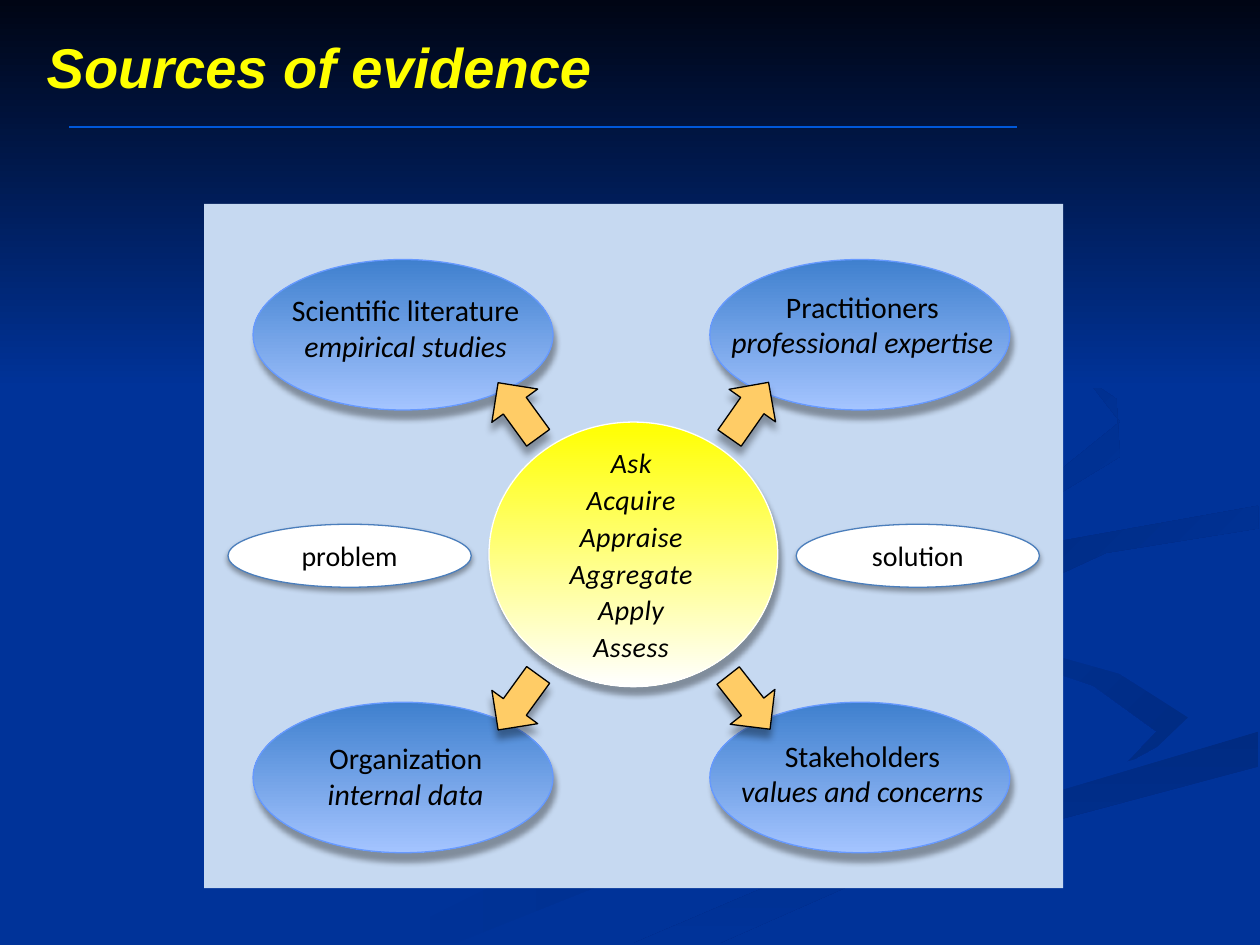
from lxml.etree import SubElement
from pptx import Presentation
from pptx.dml.color import RGBColor
from pptx.enum.shapes import MSO_CONNECTOR, MSO_SHAPE as Shape
from pptx.enum.text import MSO_ANCHOR as Anchor, MSO_AUTO_SIZE as AutoSize, PP_ALIGN as Align
from pptx.oxml.ns import qn
from pptx.util import Pt

NAVY = RGBColor.from_string("003399")
DEEP_NAVY = RGBColor.from_string("002B82")
MIDNIGHT = RGBColor.from_string("000514")
RULE_BLUE = RGBColor.from_string("0058DA")
YELLOW = RGBColor.from_string("FFFF00")
WHITE = RGBColor.from_string("FFFFFF")
BLACK = RGBColor.from_string("000000")
PALE_BLUE = RGBColor.from_string("C6D9F1")
OVAL_TOP = RGBColor.from_string("3F80CE")
OVAL_BOTTOM = RGBColor.from_string("A4C4FF")
OVAL_LINE = RGBColor.from_string("6699FF")
STEEL = RGBColor.from_string("4B7EBC")
ORANGE = RGBColor.from_string("FFCC66")

# Background ribbons: colours, clockwise gradient angle, outline in points
RIBBONS = [
    ((NAVY, DEEP_NAVY), 0, [
        (562, 398), (428, 349), (414, 330), (422, 351), (562, 400), (531, 431),
        (300, 497), (216, 539), (260, 539), (428, 472), (562, 436), (576, 418)]),
    ((NAVY, DEEP_NAVY), 45, [
        (679, 410), (639, 385), (557, 362), (521, 334), (544, 364), (625, 392),
        (661, 418), (644, 436), (677, 418)]),
    ((DEEP_NAVY, NAVY), 90, [
        (362, 539), (411, 539), (520, 491), (719, 438), (719, 418), (477, 490)]),
    ((NAVY,), 0, [
        (522, 334), (558, 362), (640, 385), (679, 410), (656, 432), (507, 472),
        (343, 539), (477, 490), (719, 418), (719, 387), (579, 350), (576, 322),
        (719, 289), (719, 279), (544, 311)]),
    ((DEEP_NAVY, NAVY), 45, [
        (562, 331), (595, 357), (580, 340), (632, 316), (719, 302), (719, 289),
        (601, 310)]),
    ((DEEP_NAVY, NAVY), 45, [
        (492, 310), (594, 289), (640, 261), (638, 228), (549, 168), (609, 201),
        (640, 241), (598, 275), (450, 307), (416, 328), (448, 360), (433, 328)]),
]

# Column, row, drop from oval to caption, and the two caption lines
SOURCES = [
    (1, 0, 16.6, "Practitioners", "professional expertise"),
    (0, 1, 21.6, "Organization", "internal data"),
    (1, 1, 20, "Stakeholders", "values and concerns"),
    (0, 0, 18.7, "Scientific literature", "empirical studies"),
]
STEPS = ["Ask", "Acquire", "Appraise", "Aggregate", "Apply", "Assess"]
ARROW_TURNS = {(0, 0): 234, (1, 1): 52, (1, 0): 305, (0, 1): 126}


def paint(shape, colors, angle=90, line=None):
    """Fill with one colour or a two-colour gradient, and set the outline."""
    if len(colors) == 1:
        shape.fill.solid()
        shape.fill.fore_color.rgb = colors[0]
    else:
        shape.fill.gradient()
        shape.fill.gradient_angle = (360 - angle) % 360
        for stop, color in zip(shape.fill.gradient_stops, colors):
            stop.color.rgb = color
    if line is None:
        shape.line.fill.background()
    else:
        shape.line.color.rgb = line
        shape.line.width = Pt(0.75)
    shape.shadow.inherit = False


def add_shadow(shape, blur=3.1, distance=5, angle=72):
    effects = shape.element.spPr.find(qn("a:effectLst"))
    shadow = SubElement(effects, qn("a:outerShdw"), blurRad=str(Pt(blur)),
                        dist=str(Pt(distance)), dir=str(angle * 60000), rotWithShape="0")
    color = SubElement(shadow, qn("a:srgbClr"), val=str(BLACK))
    SubElement(color, qn("a:alpha"), val="35000")


def add_figure(page, kind, left, top, width, height, colors, **look):
    shape = page.shapes.add_shape(kind, Pt(left), Pt(top), Pt(width), Pt(height))
    paint(shape, colors, **look)
    return shape


def write(frame, lines, size=16, font="Calibri", color=BLACK, align=Align.CENTER,
          anchor=Anchor.TOP, bold=False, italics=(False,), spacing=None, tracking=None):
    """Write one paragraph per line; italics is cycled over the lines."""
    frame.word_wrap = True
    frame.auto_size = AutoSize.NONE
    frame.vertical_anchor = anchor
    for index, text in enumerate(lines):
        para = frame.paragraphs[0] if index == 0 else frame.add_paragraph()
        para.alignment = align
        if spacing:
            para.line_spacing = spacing
        span = para.add_run()
        span.text = text
        span.font.name, span.font.size = font, Pt(size)
        span.font.color.rgb = color
        span.font.bold, span.font.italic = bold, italics[index % len(italics)]
        if tracking:
            span._r.get_or_add_rPr().set("spc", str(int(tracking * 100)))


def add_caption(page, left, top, width, height, lines, **look):
    frame = page.shapes.add_textbox(Pt(left), Pt(top), Pt(width), Pt(height)).text_frame
    frame.margin_left = frame.margin_right = frame.margin_top = frame.margin_bottom = 0
    write(frame, lines, **look)


def draw_background(page, width):
    page.background.fill.solid()
    page.background.fill.fore_color.rgb = NAVY
    for colors, angle, outline in RIBBONS:
        builder = page.shapes.build_freeform(*outline[0], scale=Pt(1))
        builder.add_line_segments(outline[1:], close=True)
        paint(builder.convert_to_shape(), colors, angle)
    add_figure(page, Shape.RECTANGLE, 0, 0, width, 222, (MIDNIGHT, NAVY))


def draw_heading(page, left, top, width, height):
    rule_y = top + 57.6
    rule = page.shapes.add_connector(MSO_CONNECTOR.STRAIGHT, Pt(left + 20), Pt(rule_y),
                                     Pt(left + 561.6), Pt(rule_y))
    rule.line.color.rgb = RULE_BLUE
    rule.line.width = Pt(0.75)
    SubElement(rule.element.spPr, qn("a:effectLst"))
    title = page.shapes.title
    title.element.getparent().append(title.element)  # in front of the background
    title.left, title.top, title.width, title.height = Pt(left), Pt(top), Pt(width), Pt(height)
    write(title.text_frame, ["Sources of evidence"], size=32, font="Arial", color=YELLOW,
          align=Align.LEFT, bold=True, italics=(True,))


def draw_diagram(page, left, top, width, height):
    add_figure(page, Shape.RECTANGLE, left, top, width, height, (PALE_BLUE,))
    # Start and end of the process
    for column, label in enumerate(("problem", "solution")):
        oval = add_figure(page, Shape.OVAL, left + 13.7 + 324.7 * column, top + 183, 139, 36,
                          (WHITE,), line=STEEL)
        add_shadow(oval, distance=1.8, angle=90)
        write(oval.text_frame, [label], anchor=Anchor.MIDDLE)
    # Four sources
    for column, row, drop, name, detail in SOURCES:
        x, y = left + 28 + 261 * column, top + 31.7 + 253 * row
        oval = add_figure(page, Shape.OVAL, x, y, 171.4, 86,
                          (OVAL_TOP, OVAL_BOTTOM), line=OVAL_LINE)
        add_shadow(oval)
        add_caption(page, x + 1.5, y + drop, 171.4, 42, [name, detail],
                    size=17, italics=(False, True))
    # Hub with the six steps
    hub = add_figure(page, Shape.OVAL, left + 162.8, top + 124.6, 165, 151.2,
                     (YELLOW, WHITE), line=WHITE)
    add_shadow(hub)
    add_caption(page, left + 179.3, top + 136, 129.6, 131, STEPS,
                italics=(True,), spacing=1.1, tracking=0.3)
    # Arrows from the hub to the sources
    for (column, row), turn in ARROW_TURNS.items():
        arrow = add_figure(page, Shape.RIGHT_ARROW, left + 160 + 132 * column,
                           top + 101.6 + 167 * row, 38.9, 32.4, (ORANGE,), line=BLACK)
        arrow.rotation = turn
        add_shadow(arrow, blur=4.2, distance=4.8, angle=90)


def main():
    deck = Presentation()
    deck.slide_width, deck.slide_height = Pt(720), Pt(540)
    page = deck.slides.add_slide(deck.slide_layouts[5])
    draw_background(page, 720)
    draw_heading(page, 19.5, 15, 572.4, 45.4)
    draw_diagram(page, 116.6, 116.6, 491, 391)
    deck.save("out.pptx")


if __name__ == "__main__":
    main()
